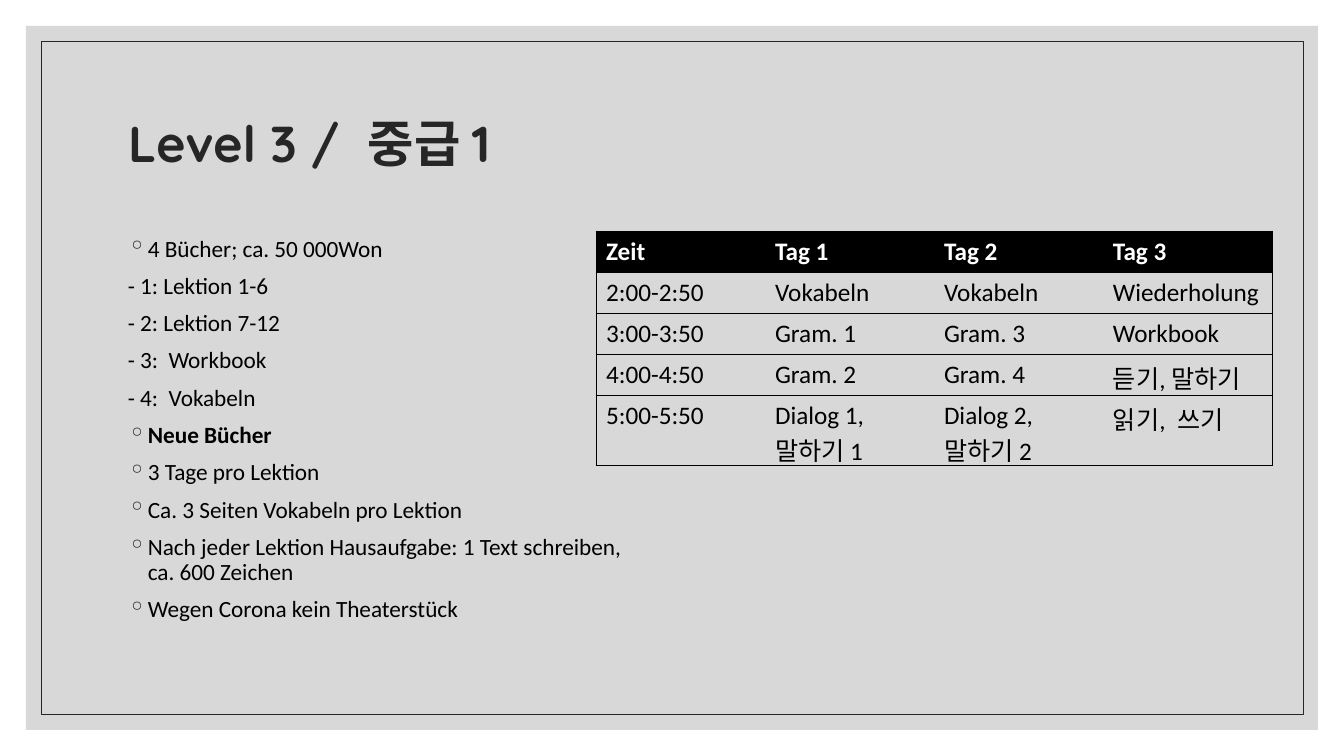
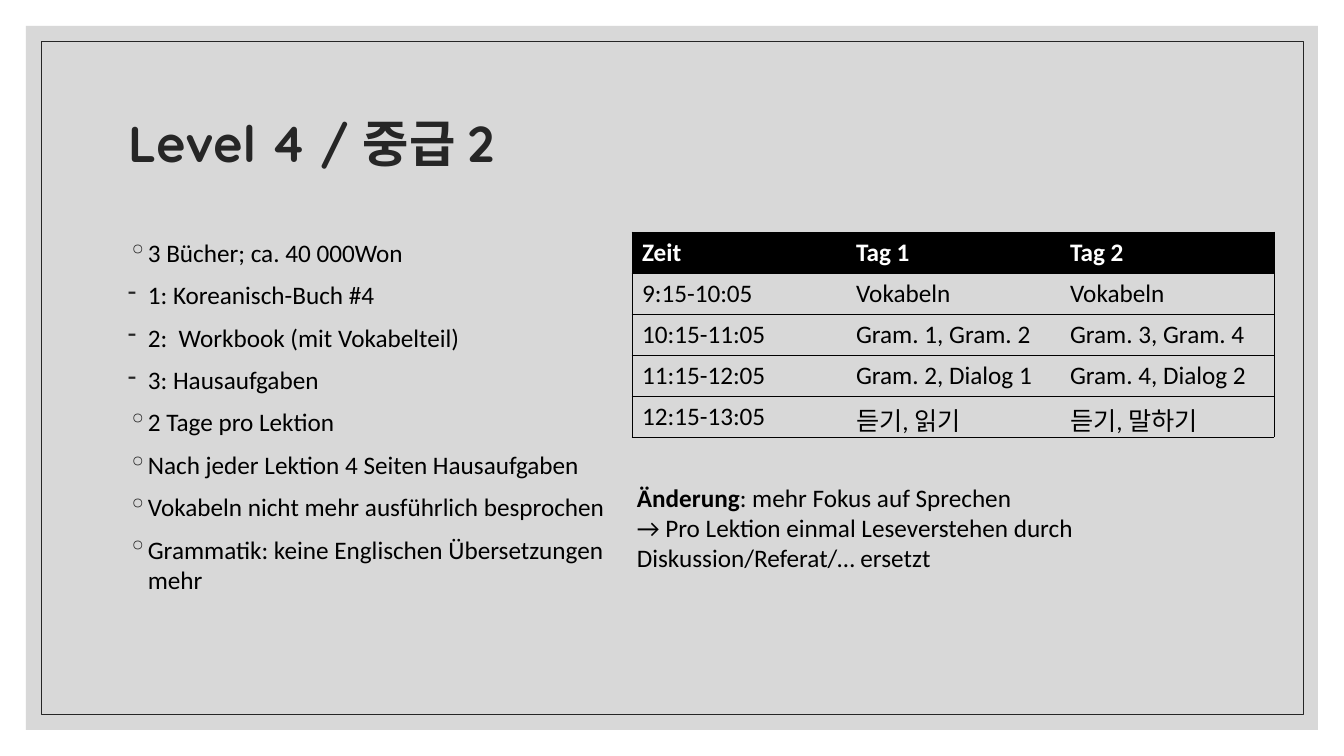
from dataclasses import dataclass

from lxml.etree import SubElement
from pptx import Presentation
from pptx.dml.color import RGBColor
from pptx.enum.shapes import MSO_SHAPE
from pptx.enum.text import MSO_ANCHOR, PP_ALIGN
from pptx.oxml.ns import qn
from pptx.slide import Slide, SlideLayout
from pptx.table import _Cell
from pptx.util import Emu, Pt

EMU_PER_PX = 914400 / 100.8
BLACK, WHITE, INK, PANEL = "000000", "FFFFFF", "262626", "BFBFBF"
BODY_FONT, TITLE_FONT = "Calibri", "Quicksand"
RING, DASH = "◦", "-"
TABLE_SIZE = 18
ROW_HEIGHT = 41


@dataclass(frozen=True)
class Box:
    left: int
    top: int
    width: int
    height: int

    def emu(self) -> tuple[Emu, Emu, Emu, Emu]:
        return px(self.left), px(self.top), px(self.width), px(self.height)


@dataclass(frozen=True)
class Item:
    text: str
    bullet: str = RING
    bold: bool = False


@dataclass(frozen=True)
class Timetable:
    left: int
    top: int
    column_width: int
    rows: list[list[str]]


@dataclass(frozen=True)
class Level:
    title: str
    items: list[Item]
    item_size: float
    line_spacing: float
    timetable: Timetable


PANEL_BOX = Box(26, 26, 1292, 704)
FRAME_BOX = Box(41, 41, 1262, 673)
TITLE_BOX = Box(118, 71, 1109, 151)
LIST_BOX = Box(118, 232, 514, 413)
NOTE_BOX = Box(627, 477, 652, 102)

LEVEL_3 = Level(
    "Level 3 /  중급 1",
    [
        Item("4 Bücher; ca. 50 000Won"),
        Item("- 1: Lektion 1-6", ""),
        Item("- 2: Lektion 7-12", ""),
        Item("- 3:  Workbook", ""),
        Item("- 4:  Vokabeln", ""),
        Item("Neue Bücher", bold=True),
        Item("3 Tage pro Lektion"),
        Item("Ca. 3 Seiten Vokabeln pro Lektion"),
        Item("Nach jeder Lektion Hausaufgabe: 1 Text schreiben, ca. 600 Zeichen"),
        Item("Wegen Corona kein Theaterstück"),
    ],
    16.6,
    0.9,
    Timetable(596, 231, 169, [
        ["Zeit", "Tag 1", "Tag 2", "Tag 3"],
        ["2:00-2:50", "Vokabeln", "Vokabeln", "Wiederholung"],
        ["3:00-3:50", "Gram. 1", "Gram. 3", "Workbook"],
        ["4:00-4:50", "Gram. 2", "Gram. 4", "듣기, 말하기"],
        ["5:00-5:50", "Dialog 1, 말하기 1", "Dialog 2,  말하기 2", "읽기,  쓰기"],
    ]),
)

LEVEL_4 = Level(
    "Level 4 / 중급 2",
    [
        Item("3 Bücher; ca. 40 000Won"),
        Item("1: Koreanisch-Buch #4", DASH),
        Item("2:  Workbook (mit Vokabelteil)", DASH),
        Item("3: Hausaufgaben", DASH),
        Item("2 Tage pro Lektion"),
        Item("Nach jeder Lektion 4 Seiten Hausaufgaben"),
        Item("Vokabeln nicht mehr ausführlich besprochen"),
        Item("Grammatik: keine Englischen Übersetzungen mehr"),
    ],
    18,
    1.0,
    Timetable(632, 232, 214, [
        ["Zeit", "Tag 1", "Tag 2"],
        ["9:15-10:05", "Vokabeln", "Vokabeln"],
        ["10:15-11:05", "Gram. 1, Gram. 2", "Gram. 3, Gram. 4"],
        ["11:15-12:05", "Gram. 2, Dialog 1", "Gram. 4, Dialog 2"],
        ["12:15-13:05", "듣기, 읽기", "듣기, 말하기"],
    ]),
)


def px(length: int) -> Emu:
    return Emu(round(length * EMU_PER_PX))


def color(code: str) -> RGBColor:
    return RGBColor.from_string(code)


def format_font(font, size: float, code: str = BLACK, bold: bool = False,
                name: str = BODY_FONT) -> None:
    font.name = name
    font.size = Pt(size)
    font.bold = bold
    font.color.rgb = color(code)


def add_frame(slide: Slide, layout: SlideLayout) -> None:
    """Draw the panel and its thin frame, then hand both to the layout."""
    panel, frame = (slide.shapes.add_shape(MSO_SHAPE.RECTANGLE, *box.emu())
                    for box in (PANEL_BOX, FRAME_BOX))
    panel.fill.solid()
    panel.fill.fore_color.rgb = color(PANEL)
    tint = panel.element.spPr.find(qn("a:solidFill"))[0]
    SubElement(tint, qn("a:alpha"), val="60000")
    panel.line.fill.background()
    frame.fill.background()
    frame.line.color.rgb = color(INK)
    frame.line.width = Pt(0.5)
    for position, shape in enumerate((panel, frame), start=2):
        shape.shadow.inherit = False
        layout.shapes.element.insert(position, shape.element)


def set_title(slide: Slide, text: str) -> None:
    title = slide.shapes.title
    title.left, title.top, title.width, title.height = TITLE_BOX.emu()
    title.text_frame.text = text
    title.text_frame.vertical_anchor = MSO_ANCHOR.MIDDLE
    para = title.text_frame.paragraphs[0]
    para.alignment = PP_ALIGN.LEFT
    para.line_spacing = 0.9
    format_font(para.runs[0].font, 36, INK, True, TITLE_FONT)


def add_bullet(para, symbol: str) -> None:
    properties = para._p.get_or_add_pPr()
    indent = px(20)
    properties.set("marL", str(indent))
    properties.set("indent", str(-indent))
    bullet_color = SubElement(properties, qn("a:buClr"))
    SubElement(bullet_color, qn("a:srgbClr"), val=INK)
    SubElement(properties, qn("a:buChar"), char=symbol)


def add_list(slide: Slide, level: Level) -> None:
    text_frame = slide.shapes.add_textbox(*LIST_BOX.emu()).text_frame
    text_frame.word_wrap = True
    text_frame.text = "\n".join(item.text for item in level.items)
    for para, item in zip(text_frame.paragraphs, level.items):
        para.line_spacing = level.line_spacing
        para.space_before = Pt(8.7)
        if item.bullet:
            add_bullet(para, item.bullet)
        format_font(para.runs[0].font, level.item_size, bold=item.bold)


def set_borders(cell: _Cell, visible: str) -> None:
    """Show the sides named by letter (L, R, T, B) and clear the others."""
    properties = cell._tc.get_or_add_tcPr()
    for side in "LRTB":
        line = SubElement(properties, qn(f"a:ln{side}"), w=str(Pt(0.5)))
        if side in visible:
            fill = SubElement(line, qn("a:solidFill"))
            SubElement(fill, qn("a:srgbClr"), val=BLACK)
        else:
            SubElement(line, qn("a:noFill"))


def add_timetable(slide: Slide, timetable: Timetable) -> None:
    row_count, column_count = len(timetable.rows), len(timetable.rows[0])
    box = Box(timetable.left, timetable.top,
              timetable.column_width * column_count, ROW_HEIGHT * row_count)
    table = slide.shapes.add_table(row_count, column_count, *box.emu()).table
    table.first_row = table.horz_banding = False
    for column in table.columns:
        column.width = px(timetable.column_width)
    for row_index, texts in enumerate(timetable.rows):
        table.rows[row_index].height = px(ROW_HEIGHT)
        header = row_index == 0
        for column_index, text in enumerate(texts):
            cell = table.cell(row_index, column_index)
            left = "L" if column_index == 0 else ""
            right = "R" if column_index == column_count - 1 else ""
            set_borders(cell, "TB" + left + right)
            if header:
                cell.fill.solid()
                cell.fill.fore_color.rgb = color(BLACK)
            else:
                cell.fill.background()
            cell.text_frame.text = text
            format_font(cell.text_frame.paragraphs[0].runs[0].font, TABLE_SIZE,
                        WHITE if header else BLACK, header)


def add_change_note(slide: Slide) -> None:
    text_frame = slide.shapes.add_textbox(*NOTE_BOX.emu()).text_frame
    text_frame.word_wrap = True
    text_frame.text = ("Änderung\n→ Pro Lektion einmal Leseverstehen durch "
                       "Diskussion/Referat/… ersetzt")
    heading, detail = text_frame.paragraphs
    heading.add_run().text = ": mehr Fokus auf Sprechen"
    for span in (*heading.runs, *detail.runs):
        format_font(span.font, 18)
    heading.runs[0].font.bold = True


def add_level(deck, layout: SlideLayout, level: Level) -> Slide:
    slide = deck.slides.add_slide(layout)
    set_title(slide, level.title)
    add_list(slide, level)
    add_timetable(slide, level.timetable)
    return slide


def main() -> None:
    deck = Presentation()
    deck.slide_width, deck.slide_height = px(1344), px(756)
    layout = deck.slide_layouts.get_by_name("Title Only")
    first_slide = add_level(deck, layout, LEVEL_3)
    add_frame(first_slide, layout)
    add_change_note(add_level(deck, layout, LEVEL_4))
    deck.save("out.pptx")


if __name__ == "__main__":
    main()
